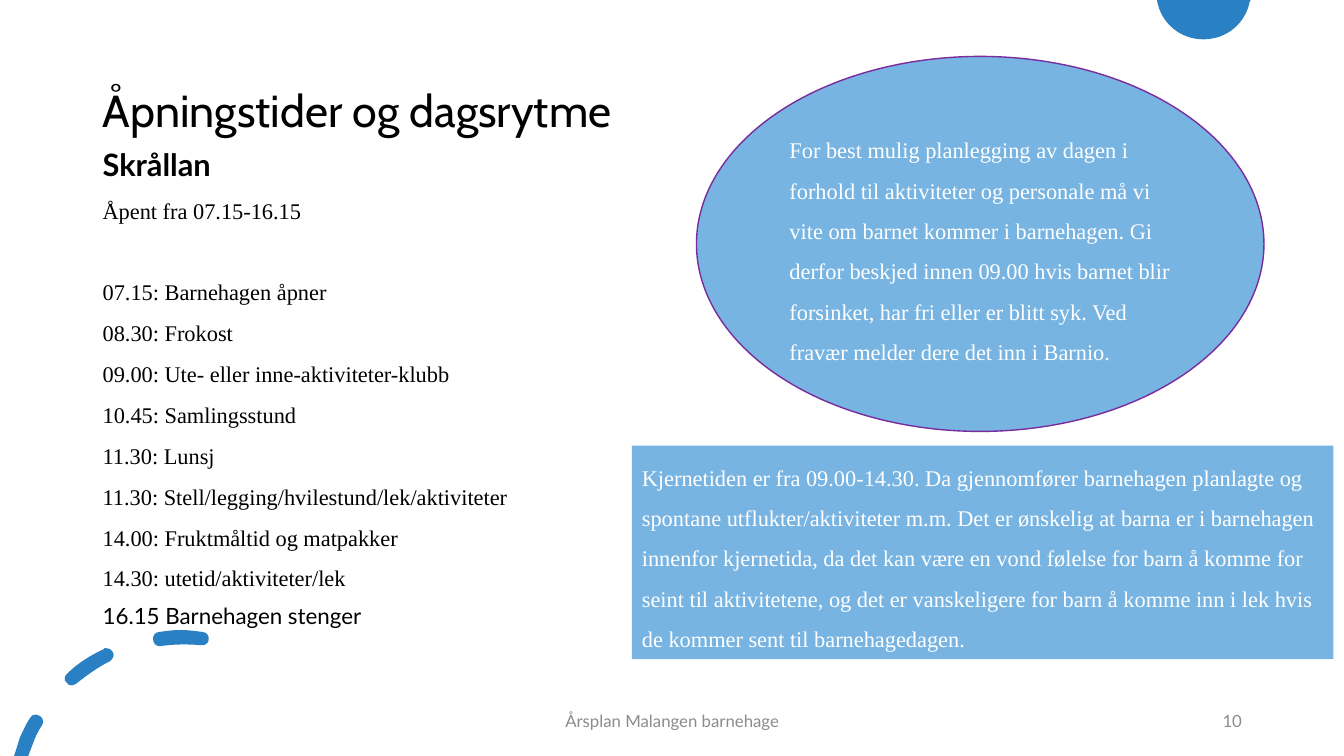
from dataclasses import dataclass

from lxml import etree
from pptx import Presentation
from pptx import util as u
from pptx.dml.color import RGBColor
from pptx.enum import shapes, text
from pptx.oxml.ns import qn

TITLE = "Åpningstider og dagsrytme"
DEPARTMENT = "Skrållan"
OPENING_HOURS = "Åpent fra 07.15-16.15"
DAY_RHYTHM = [
    "07.15: Barnehagen åpner",
    "08.30: Frokost",
    "09.00: Ute- eller inne-aktiviteter-klubb",
    "10.45: Samlingsstund",
    "11.30: Lunsj",
    "11.30: Stell/legging/hvilestund/lek/aktiviteter",
    "14.00: Fruktmåltid og matpakker",
    "14.30: utetid/aktiviteter/lek",
]
CLOSING = "16.15 Barnehagen stenger"
ABSENCE_NOTICE = (
    "For best mulig planlegging av dagen i forhold til aktiviteter og personale "
    "må vi vite om barnet kommer i barnehagen. Gi derfor beskjed innen 09.00 hvis "
    "barnet blir forsinket, har fri eller er blitt syk. Ved fravær melder dere det "
    "inn i Barnio."
)
CORE_HOURS = (
    "Kjernetiden er fra 09.00-14.30. Da gjennomfører barnehagen planlagte og "
    "spontane utflukter/aktiviteter m.m. Det er ønskelig at barna er i barnehagen "
    "innenfor kjernetida, da det kan være en vond følelse for barn å komme for "
    "seint til aktivitetene, og det er vanskeligere for barn å komme inn i lek hvis "
    "de kommer sent til barnehagedagen."
)
FOOTER = "Årsplan Malangen barnehage"
PAGE_NUMBER = "10"

# Each outline: a start point, then lines (x, y) and curves (two handles and an end).
TOP_DISC = [
    [(11.48, 0), (12.41, 0), (12.4, 0.01), (12.36, 0.23, 12.17, 0.39, 11.94, 0.39),
     (11.71, 0.39, 11.52, 0.23, 11.48, 0.01)],
]
DASHED_ARC = [
    [(0.36, 7.09), (0.34, 7.08, 0.31, 7.1, 0.3, 7.12), (0.26, 7.18, 0.23, 7.25, 0.2, 7.31),
     (0.14, 7.5), (0.28, 7.5), (0.33, 7.37), (0.35, 7.31, 0.38, 7.25, 0.42, 7.19),
     (0.44, 7.16, 0.42, 7.11, 0.39, 7.1), (0.38, 7.09, 0.37, 7.09, 0.36, 7.09)],
    [(1.05, 6.43), (1.04, 6.43, 1.03, 6.43, 1.03, 6.44), (0.9, 6.5, 0.77, 6.58, 0.67, 6.68),
     (0.64, 6.7, 0.63, 6.75, 0.66, 6.77), (0.67, 6.79, 0.69, 6.8, 0.71, 6.8), (0.71, 6.8),
     (0.73, 6.8, 0.74, 6.79, 0.76, 6.78), (0.86, 6.7, 0.97, 6.62, 1.09, 6.56),
     (1.12, 6.54, 1.14, 6.5, 1.12, 6.47), (1.11, 6.44, 1.08, 6.43, 1.05, 6.43)],
    [(1.79, 6.25), (1.72, 6.25, 1.65, 6.26, 1.58, 6.27), (1.54, 6.27, 1.51, 6.31, 1.52, 6.35),
     (1.52, 6.38, 1.55, 6.41, 1.58, 6.41), (1.59, 6.41, 1.59, 6.41, 1.59, 6.41),
     (1.73, 6.39, 1.86, 6.39, 1.99, 6.4), (2.03, 6.41, 2.07, 6.38, 2.07, 6.35),
     (2.08, 6.31, 2.05, 6.27, 2.01, 6.27), (2.01, 6.27, 2.01, 6.27, 2.01, 6.27),
     (1.94, 6.26, 1.86, 6.25, 1.79, 6.25)],
]


@dataclass(frozen=True)
class Theme:
    accent: str = "2980C3"
    panel: str = "77B4E2"
    outline: str = "792C9E"
    ink: str = "000000"
    light: str = "FFFFFF"
    muted: str = "8C8C8C"
    heading: str = "Cabin"
    sans: str = "Lato"
    serif: str = "Times New Roman"
    title_size: int = 32
    department_size: int = 22
    body_size: int = 16
    footer_size: int = 12


THEME = Theme()
ROW = u.Pt(1.2 * THEME.body_size)
OPEN_ROW = u.Pt(1.8 * THEME.body_size)
GAP = u.Pt(10)
GROUP_GAP = u.Pt(38.7)


def apply(target, values):
    for name, value in values.items():
        setattr(target, name, value)


def write(paragraph, words, font, size, color, bold=False, **layout):
    paragraph.text = words
    apply(paragraph, {"alignment": text.PP_ALIGN.LEFT, "space_before": u.Pt(0), **layout})
    apply(paragraph.font, {"name": font, "size": u.Pt(size), "bold": bold})
    paragraph.font.color.rgb = RGBColor.from_string(color)


def paint(shape, fill, line=None):
    shape.shadow.inherit = False
    shape.fill.solid()
    shape.fill.fore_color.rgb = RGBColor.from_string(fill)
    if line:
        shape.line.color.rgb = RGBColor.from_string(line)
        shape.line.width = u.Pt(1)
    else:
        shape.line.fill.background()


def add_ornament(slide, outlines):
    """Draw the outlines as straight segments, then bend those that have handles."""
    builder = slide.shapes.build_freeform(*map(u.Inches, outlines[0][0]))
    for number, (start, *segments) in enumerate(outlines):
        if number:
            builder.move_to(*map(u.Inches, start))
        builder.add_line_segments(
            [tuple(map(u.Inches, segment[-2:])) for segment in segments], close=True)
    ornament = builder.convert_to_shape()
    paint(ornament, THEME.accent)

    segments = [segment for outline in outlines for segment in outline[1:]]
    edges = list(ornament._element.iter(qn("a:lnTo")))
    for edge, segment in zip(edges, segments):
        if len(segment) == 2:
            continue
        edge.clear()
        curve = etree.Element(qn("a:cubicBezTo"))
        for x, y in zip(segment[::2], segment[1::2]):
            etree.SubElement(curve, qn("a:pt"), x=str(u.Inches(x) - ornament.left),
                             y=str(u.Inches(y) - ornament.top))
        edge.getparent().replace(edge, curve)


def add_text_box(slide, box, anchor):
    frame = slide.shapes.add_textbox(*map(u.Inches, box)).text_frame
    apply(frame, {"word_wrap": True, "vertical_anchor": anchor})
    return frame


def add_panel(slide, kind, box, words, anchor, line=None):
    panel = slide.shapes.add_shape(kind, *map(u.Inches, box))
    paint(panel, THEME.panel, line)
    apply(panel.text_frame, {"word_wrap": True, "vertical_anchor": anchor})
    write(panel.text_frame.paragraphs[0], words, THEME.serif, THEME.body_size,
          THEME.light, line_spacing=OPEN_ROW)


def add_schedule(slide):
    frame = add_text_box(slide, (0.92, 1.44, 5.63, 5.35), text.MSO_ANCHOR.TOP)
    write(frame.paragraphs[0], DEPARTMENT, THEME.sans, THEME.department_size,
          THEME.ink, bold=True, line_spacing=0.9)
    for number, entry in enumerate([OPENING_HOURS, *DAY_RHYTHM]):
        write(frame.add_paragraph(), entry, THEME.serif, THEME.body_size, THEME.ink,
              line_spacing=ROW, space_before=GROUP_GAP if number == 1 else GAP)
    write(frame.add_paragraph(), CLOSING, THEME.sans, THEME.body_size, THEME.ink,
          line_spacing=0.9, space_before=GAP)


def main():
    deck = Presentation()
    apply(deck, {"slide_width": u.Inches(40 / 3), "slide_height": u.Inches(7.5)})
    slide = deck.slides.add_slide(deck.slide_layouts[5])
    for outlines in (TOP_DISC, DASHED_ARC):
        add_ornament(slide, outlines)

    title = slide.shapes.title
    apply(title, dict(zip(("left", "top", "width", "height"),
                          map(u.Inches, (0.92, 0.4, 11.5, 1.45)))))
    apply(title.text_frame, {"word_wrap": True, "vertical_anchor": text.MSO_ANCHOR.MIDDLE})
    write(title.text_frame.paragraphs[0], TITLE, THEME.heading, THEME.title_size,
          THEME.ink, line_spacing=0.9)

    add_schedule(slide)
    for words, box, alignment in (
        (FOOTER, (4.42, 6.95, 4.5, 0.4), text.PP_ALIGN.CENTER),
        (PAGE_NUMBER, (9.42, 6.95, 3, 0.4), text.PP_ALIGN.RIGHT),
    ):
        frame = add_text_box(slide, box, text.MSO_ANCHOR.MIDDLE)
        write(frame.paragraphs[0], words, THEME.sans, THEME.footer_size, THEME.muted,
              alignment=alignment)

    add_panel(slide, shapes.MSO_SHAPE.OVAL, (6.91, 0.56, 5.63, 3.72), ABSENCE_NOTICE,
              text.MSO_ANCHOR.MIDDLE, THEME.outline)
    add_panel(slide, shapes.MSO_SHAPE.RECTANGLE, (6.27, 4.42, 6.96, 2.12), CORE_HOURS,
              text.MSO_ANCHOR.TOP)
    deck.save("out.pptx")


if __name__ == "__main__":
    main()
